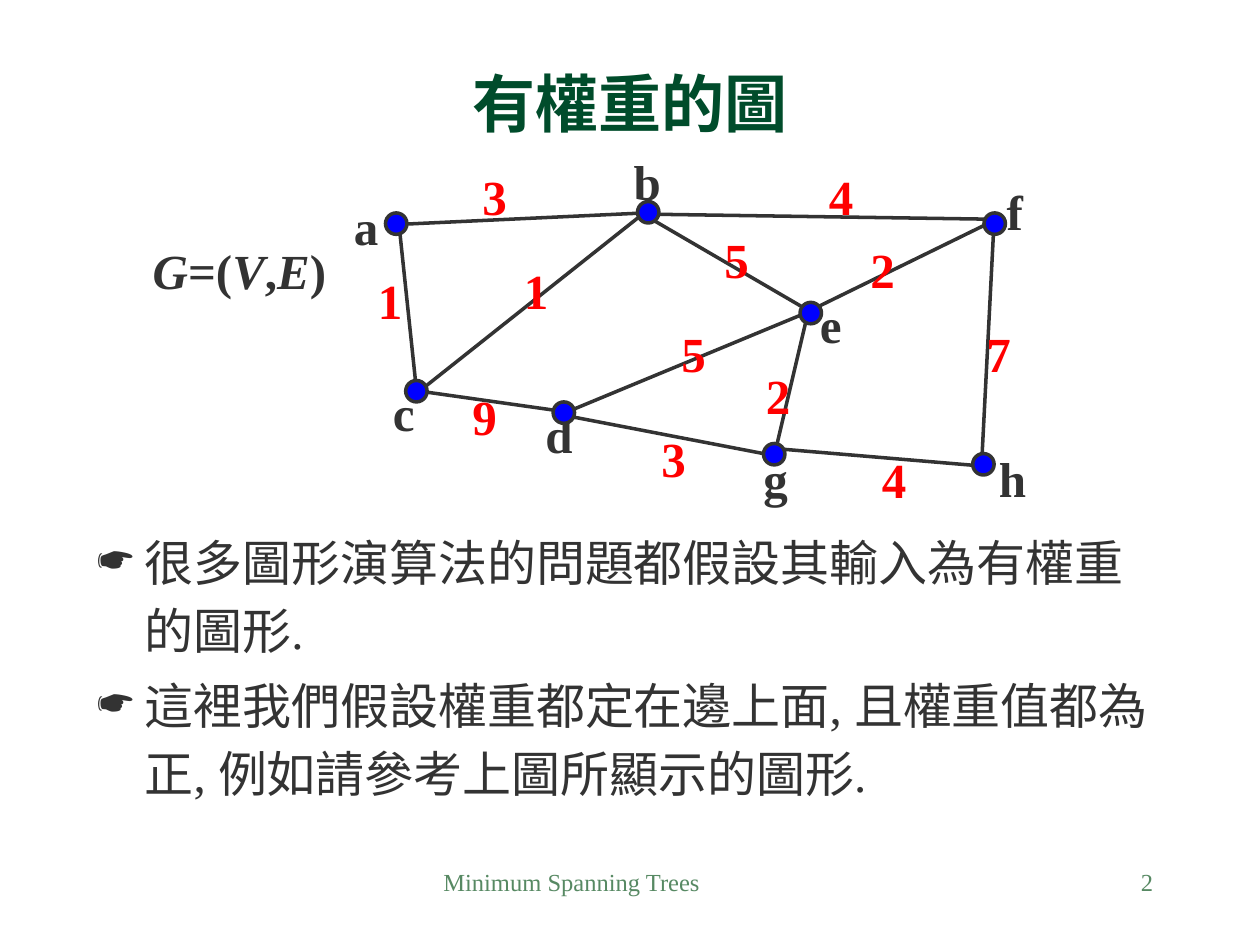
from lxml.etree import SubElement as Sub
from pptx import Presentation
from pptx.dml.color import RGBColor as RGB
from pptx.enum.shapes import MSO_CONNECTOR as Link, MSO_SHAPE as Shape
from pptx.enum.text import MSO_ANCHOR as Anchor, PP_ALIGN as Align
from pptx.oxml.ns import qn
from pptx.util import Inches, Pt

INK = RGB(0x33, 0x33, 0x33)
GREEN = RGB(0x00, 0x4C, 0x2B)
SAGE = RGB(0x57, 0x89, 0x63)
RED = RGB(0xFF, 0x00, 0x00)
BLUE = RGB(0x00, 0x00, 0xFF)
FONT = "Times New Roman"
WIDE, HIGH = Inches(10), Inches(7.5)
COLS, ROWS = 100, 75
DOT, TALL, DIGIT = 1.7, 5.7, 4

NODES = {
    "a": ((5.6, 6.9), (2.1, 5.1), 4),
    "b": ((25.6, 6), (24.3, 1.5), 4.2),
    "c": ((7.2, 20.2), (5.2, 19.9), 3.7),
    "d": ((18.9, 21.9), (17.3, 21.6), 4.2),
    "e": ((38.5, 14), (39.1, 12.9), 3.7),
    "f": ((53.1, 6.9), (53.9, 3.9), 3.3),
    "g": ((35.6, 25.2), (34.6, 25.1), 4),
    "h": ((52.2, 26), (53.3, 25.1), 4.2),
}
EDGES = [
    ("7", (52.3, 15.2), (52.9, 27), (53.9, 7.5)),
    ("5", (31.5, 7.7), (26.9, 7.5), (39.6, 14.9)),
    ("1", (4, 11), (8.1, 21.4), (6.7, 8.1)),
    ("3", (12.3, 2.7), (6.9, 7.8), (26.2, 6.9)),
    ("1", (15.6, 10.2), (8.1, 21.2), (26.5, 6.6)),
    ("2", (34.8, 18.5), (36.4, 26.4), (39.2, 14.5)),
    ("2", (43.1, 8.5), (53.7, 7.6), (39.6, 14.5)),
    ("9", (11.5, 20.2), (19.3, 22.6), (8, 21)),
    ("3", (26.5, 23.5), (35.6, 26), (20.5, 23.1)),
    ("5", (28.1, 15.2), (39.3, 14.7), (20, 22.7)),
    ("4", (44, 25.2), (53.1, 27), (36.5, 25.6)),
    ("4", (39.8, 2.7), (53.7, 7.4), (26.7, 7)),
]
POINTS = [
    "很多圖形演算法的問題都假設其輸入為有權重的圖形.",
    "這裡我們假設權重都定在邊上面, 且權重值都為正, 例如請參考上圖所顯示的圖形.",
]
TERMS = [("G", True), ("=(", False), ("V", True), (",", False), ("E", True), (")", False)]


def grid(*cells):
    """Turn alternating columns and rows into slide lengths."""
    return [round(c * (HIGH / ROWS if i % 2 else WIDE / COLS)) for i, c in enumerate(cells)]


def write(slide, box, *paras, size=28, color=INK, bold=False, align=Align.LEFT,
          anchor=Anchor.TOP, wrap=True):
    """Add a text box whose paragraphs are strings or lists of (text, italic)."""
    frame = slide.shapes.add_textbox(*grid(*box)).text_frame
    frame.word_wrap, frame.vertical_anchor = wrap, anchor
    for i, para in enumerate(paras):
        line = frame.add_paragraph() if i else frame.paragraphs[0]
        line.alignment = align
        for text, slant in [(para, False)] if isinstance(para, str) else para:
            run = line.add_run()
            run.text = text
            font = run.font
            font.name, font.size, font.bold, font.italic = FONT, Pt(size), bold, slant
            font.color.rgb = color
    return frame


def draw_edge(slide, start, end):
    """Draw a plain line between two grid points."""
    line = slide.shapes.add_connector(Link.STRAIGHT, *grid(*start, *end))
    line.line.color.rgb, line.line.width = INK, Pt(2)
    Sub(line._element.spPr, qn("a:effectLst"))


def draw_dot(slide, x, y):
    """Draw the round mark of a node."""
    dot = slide.shapes.add_shape(Shape.OVAL, *grid(x, y, DOT, DOT))
    dot.shadow.inherit = False
    dot.fill.solid()
    dot.fill.fore_color.rgb = BLUE
    dot.line.color.rgb, dot.line.width = INK, Pt(2)


def draw_graph(slide, left, top):
    """Draw edges, names, weights and dots from the given corner."""
    def shift(spot):
        """Move a spot from the graph to the slide."""
        return left + spot[0], top + spot[1]

    for _, _, start, end in EDGES:
        draw_edge(slide, shift(start), shift(end))
    for name, (_, spot, width) in NODES.items():
        write(slide, (*shift(spot), width, TALL), name, bold=True, wrap=False)
    for weight, spot, _, _ in EDGES:
        write(slide, (*shift(spot), DIGIT, TALL), weight, color=RED, bold=True, wrap=False)
    for spot, _, _ in NODES.values():
        draw_dot(slide, *shift(spot))


def draw_points(slide, box):
    """Write the bullet list."""
    for line in write(slide, box, *POINTS).paragraphs:
        line.line_spacing, line.space_before = 1.15, Pt(4.2)
        props = line._p.get_or_add_pPr()
        props.set("marL", str(Inches(0.38)))
        props.set("indent", str(-Inches(0.38)))
        Sub(props, qn("a:buChar"), char="☛")


def draw_foot(slide, left, top, width, height):
    """Write the footer and the slide number."""
    write(slide, (left, top, 31.7, height), "Minimum Spanning Trees", size=14, color=SAGE)
    write(slide, (left + width - 20.8, top, 20.8, height), "2", size=14, color=SAGE,
          align=Align.RIGHT)


def main():
    """Build and save the slide."""
    deck = Presentation()
    deck.slide_width, deck.slide_height = WIDE, HIGH
    slide = deck.slides.add_slide(deck.slide_layouts[6])
    draw_foot(slide, 34.2, 68.3, 58.3, 5)
    write(slide, (5, 5.8, 90, 5.8), "有權重的圖", size=36, color=GREEN, bold=True,
          align=Align.CENTER, anchor=Anchor.BOTTOM)
    draw_points(slide, (6.7, 41.1, 85.6, 23.2))
    draw_graph(slide, 25, 10)
    write(slide, (11.1, 18.6, 15.8, TALL), TERMS, bold=True, align=Align.CENTER,
          anchor=Anchor.MIDDLE, wrap=False)
    deck.save("out.pptx")


if __name__ == "__main__":
    main()
